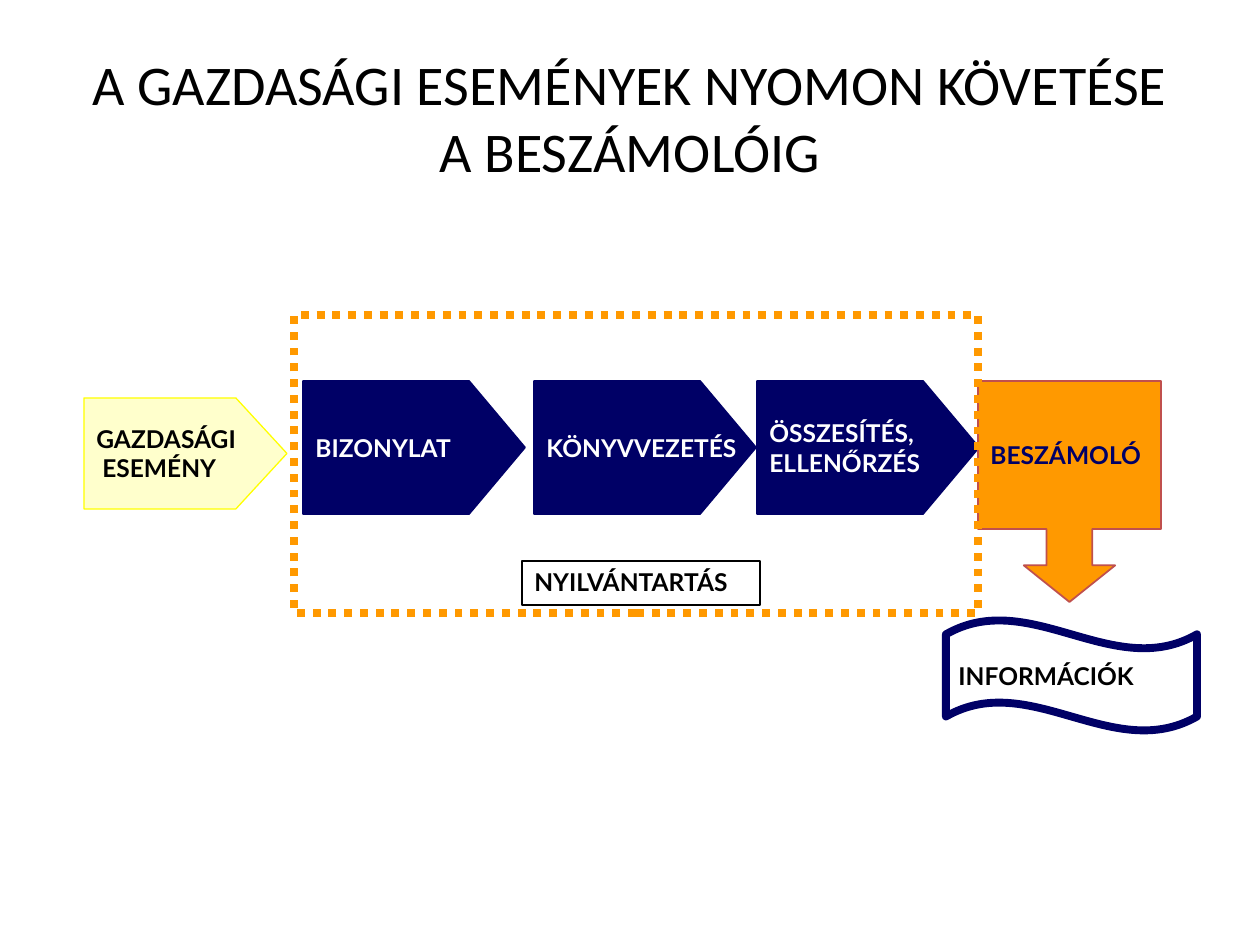
from dataclasses import dataclass

from pptx import Presentation
from pptx.dml.color import RGBColor
from pptx.enum.dml import MSO_LINE
from pptx.enum.shapes import MSO_SHAPE
from pptx.enum.text import MSO_ANCHOR, MSO_AUTO_SIZE, PP_ALIGN
from pptx.util import Emu, Pt

PX = 914400 / 126


@dataclass(frozen=True)
class Theme:
    black: str = "000000"
    white: str = "FFFFFF"
    navy: str = "000066"
    orange: str = "FF9900"
    brick: str = "C0504D"
    cream: str = "FFFFCC"
    yellow: str = "FFFF00"
    title_font: str = "Calibri"
    label_font: str = "Lato"
    title_size: int = 32
    label_size: int = 14
    hairline: float = 0.75
    thin: int = 1
    thick: float = 4.5


class SlideBuilder:
    def __init__(self, prs, theme):
        self.theme = theme
        self.s = prs.slides.add_slide(prs.slide_layouts[5])

    def box(self, x, y, w, h):
        return [Emu(round(v * PX)) for v in (x, y, w, h)]

    def format(self, p, font, size, color, align, bold=False):
        p.alignment = align
        p.font.name = font
        p.font.size = Pt(size)
        p.font.bold = bold
        p.font.color.rgb = RGBColor.from_string(color)

    def title(self, text, *box):
        t = self.theme
        sp = self.s.shapes.title
        sp.left, sp.top, sp.width, sp.height = self.box(*box)
        tf = sp.text_frame
        tf.text = text
        tf.vertical_anchor = MSO_ANCHOR.MIDDLE
        self.format(tf.paragraphs[0], t.title_font, t.title_size, t.black, PP_ALIGN.CENTER)

    def shape(self, kind, *box, line, width, fill=None, adj=()):
        sp = self.s.shapes.add_shape(kind, *self.box(*box))
        sp.shadow.inherit = False
        for i, value in enumerate(adj):
            sp.adjustments[i] = value
        if fill:
            sp.fill.solid()
            sp.fill.fore_color.rgb = RGBColor.from_string(fill)
        else:
            sp.fill.background()
        sp.line.color.rgb = RGBColor.from_string(line)
        sp.line.width = Pt(width)
        return sp

    def label(self, sp, text, color, anchor=MSO_ANCHOR.MIDDLE):
        t = self.theme
        tf = sp.text_frame
        tf.word_wrap = False
        tf.vertical_anchor = anchor
        tf.text = text
        for p in tf.paragraphs:
            self.format(p, t.label_font, t.label_size, color, PP_ALIGN.LEFT, True)
        return tf


def main():
    prs = Presentation()
    prs.slide_width, prs.slide_height = Emu(round(1260 * PX)), Emu(round(945 * PX))
    t = Theme()
    b = SlideBuilder(prs, t)

    b.title("A GAZDASÁGI ESEMÉNYEK NYOMON KÖVETÉSE A BESZÁMOLÓIG", 63, 38, 1134, 158)

    event = b.shape(MSO_SHAPE.PENTAGON, 84, 398, 203, 111,
                    line=t.yellow, width=t.hairline, fill=t.cream, adj=[0.46])
    b.label(event, "GAZDASÁGI\v ESEMÉNY", t.black)

    steps = [(303, "BIZONYLAT"), (534, "KÖNYVVEZETÉS"), (757, "ÖSSZESÍTÉS,\nELLENŐRZÉS")]
    for x, text in steps:
        step = b.shape(MSO_SHAPE.PENTAGON, x, 381, 222, 133,
                       line=t.navy, width=t.thin, fill=t.navy, adj=[0.42])
        b.label(step, text, t.white)

    report = b.shape(MSO_SHAPE.DOWN_ARROW_CALLOUT, 978, 381, 183, 221,
                     line=t.brick, width=t.thin, fill=t.orange, adj=[0.25, 0.25, 0.2, 0.67])
    b.label(report, "BESZÁMOLÓ", t.navy)

    info = b.shape(MSO_SHAPE.WAVE, 946, 620, 251, 111,
                   line=t.navy, width=t.thick, fill=t.white, adj=[0.13, 0])
    b.label(info, "INFORMÁCIÓK", t.black)

    frame = b.shape(MSO_SHAPE.RECTANGLE, 294, 315, 684, 298, line=t.orange, width=t.thick)
    frame.line.dash_style = MSO_LINE.ROUND_DOT

    records = b.shape(MSO_SHAPE.RECTANGLE, 522, 561, 238, 44, line=t.black, width=t.thin)
    tf = b.label(records, "NYILVÁNTARTÁS", t.black, MSO_ANCHOR.TOP)
    tf.auto_size = MSO_AUTO_SIZE.SHAPE_TO_FIT_TEXT

    prs.save("out.pptx")


if __name__ == "__main__":
    main()
